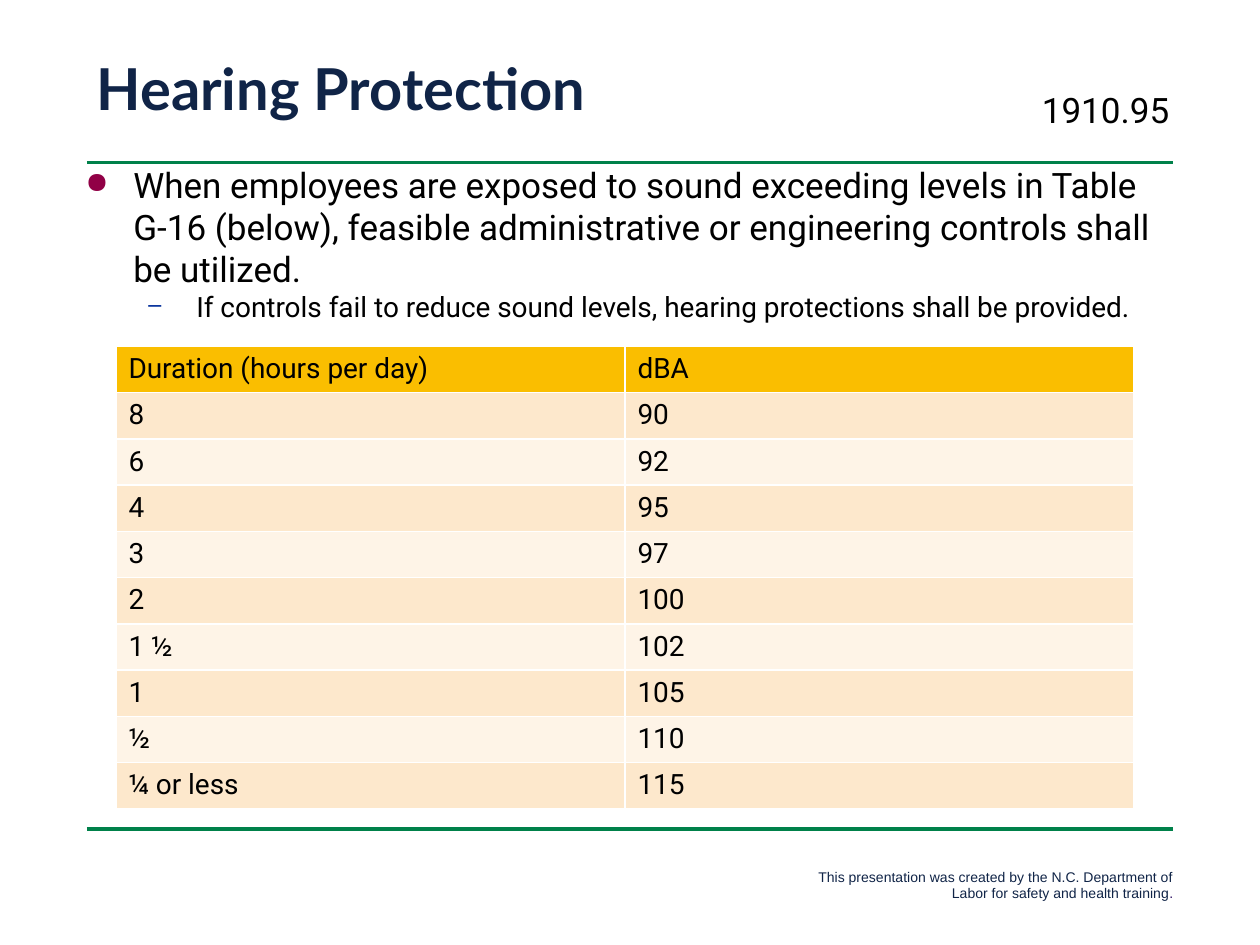
"""Build the Hearing Protection slide with its table of permitted noise exposures."""
from lxml.etree import SubElement
from pptx import Presentation
from pptx.dml.color import RGBColor
from pptx.enum.shapes import MSO_CONNECTOR
from pptx.enum.text import MSO_ANCHOR, MSO_AUTO_SIZE, PP_ALIGN
from pptx.oxml.ns import qn
from pptx.util import Inches, Pt

BLACK = RGBColor(0x00, 0x00, 0x00)
WHITE = RGBColor(0xFF, 0xFF, 0xFF)
NAVY = RGBColor(0x10, 0x24, 0x47)
PURPLE = RGBColor(0x2B, 0x0E, 0x62)
GREEN = RGBColor(0x00, 0x81, 0x4A)
MAROON = RGBColor(0x91, 0x00, 0x46)
BLUE = RGBColor(0x01, 0x2D, 0x9A)
GOLD = RGBColor(0xFA, 0xBE, 0x00)
PEACH = RGBColor(0xFD, 0xE8, 0xCC)
CREAM = RGBColor(0xFE, 0xF4, 0xE7)


def write(paragraph, text, size=16, font="Roboto", color=BLACK, bold=False,
          align=PP_ALIGN.LEFT, bullet=None, bullet_color=None, indent=0):
    paragraph.alignment = align
    if bullet:
        properties = paragraph._p.get_or_add_pPr()
        properties.set("marL", str(Inches(indent)))
        properties.set("indent", str(Inches(-0.38)))
        tint = SubElement(properties, qn("a:buClr"))
        SubElement(tint, qn("a:srgbClr"), val=str(bullet_color))
        SubElement(properties, qn("a:buSzPct"), val="84000")
        SubElement(properties, qn("a:buChar"), char=bullet)
    run = paragraph.add_run()
    run.text = text
    run.font.size = Pt(size)
    run.font.name = font
    run.font.bold = bold
    run.font.color.rgb = color


def add_text_frame(left, top, width, height):
    box = slide.shapes.add_textbox(Inches(left), Inches(top), Inches(width), Inches(height))
    box.text_frame.word_wrap = True
    box.text_frame.auto_size = MSO_AUTO_SIZE.SHAPE_TO_FIT_TEXT
    return box.text_frame


presentation = Presentation()
presentation.slide_width = Inches(10)
presentation.slide_height = Inches(7.5)
slide = presentation.slides.add_slide(presentation.slide_layouts[6])

for rule_top in (1.29, 6.58):
    rule = slide.shapes.add_connector(
        MSO_CONNECTOR.STRAIGHT, Inches(0.69), Inches(rule_top), Inches(9.31), Inches(rule_top))
    rule.line.color.rgb = GREEN
    rule.line.width = Pt(2)
    SubElement(rule._element.spPr, qn("a:effectLst"))

credit = add_text_frame(6.16, 6.84, 3.25, 0.37).paragraphs[0]
write(credit, "This presentation was created by the N.C. Department of "
      "Labor for safety and health training",
      size=8, font="Arial", color=NAVY, align=PP_ALIGN.RIGHT)
write(credit, ".", size=8, font="Arial", color=PURPLE, align=PP_ALIGN.RIGHT)

title = add_text_frame(0.67, 0.42, 9, 0.61)
title.auto_size = MSO_AUTO_SIZE.NONE
title.vertical_anchor = MSO_ANCHOR.MIDDLE
title.paragraphs[0].line_spacing = 0.9
write(title.paragraphs[0], "Hearing Protection", size=33, font="Lato", color=NAVY, bold=True)

standard = add_text_frame(8.17, 0.65, 1.42, 0.44)
write(standard.paragraphs[0], "1910.95", size=20)

requirements = add_text_frame(0.58, 1.25, 8.67, 1.65)
write(requirements.paragraphs[0],
      "When employees are exposed to sound exceeding levels in Table G-16 (below), "
      "feasible administrative or engineering controls shall be utilized.",
      size=20, bullet="●", bullet_color=MAROON, indent=0.38)
fallback = requirements.add_paragraph()
fallback.level = 1
write(fallback,
      "If controls fail to reduce sound levels, hearing protections shall be provided.",
      bullet="–", bullet_color=BLUE, indent=0.88)

exposures = [
    ("Duration (hours per day)", "dBA"),
    ("8", "90"),
    ("6", "92"),
    ("4", "95"),
    ("3", "97"),
    ("2", "100"),
    ("1 ½", "102"),
    ("1", "105"),
    ("½", "110"),
    ("¼ or less", "115"),
]
limits = slide.shapes.add_table(
    len(exposures), 2, Inches(0.92), Inches(2.75), Inches(8.08), Inches(3.67)).table
for row, exposure in enumerate(exposures):
    for column, value in enumerate(exposure):
        cell = limits.cell(row, column)
        write(cell.text_frame.paragraphs[0], value)
        for side in ("lnL", "lnR", "lnT", "lnB"):
            border = SubElement(cell._tc.get_or_add_tcPr(), qn(f"a:{side}"), w=str(Pt(1)))
            paint = SubElement(border, qn("a:solidFill"))
            SubElement(paint, qn("a:srgbClr"), val=str(WHITE))
        cell.fill.solid()
        cell.fill.fore_color.rgb = GOLD if row == 0 else PEACH if row % 2 else CREAM

presentation.save("out.pptx")
